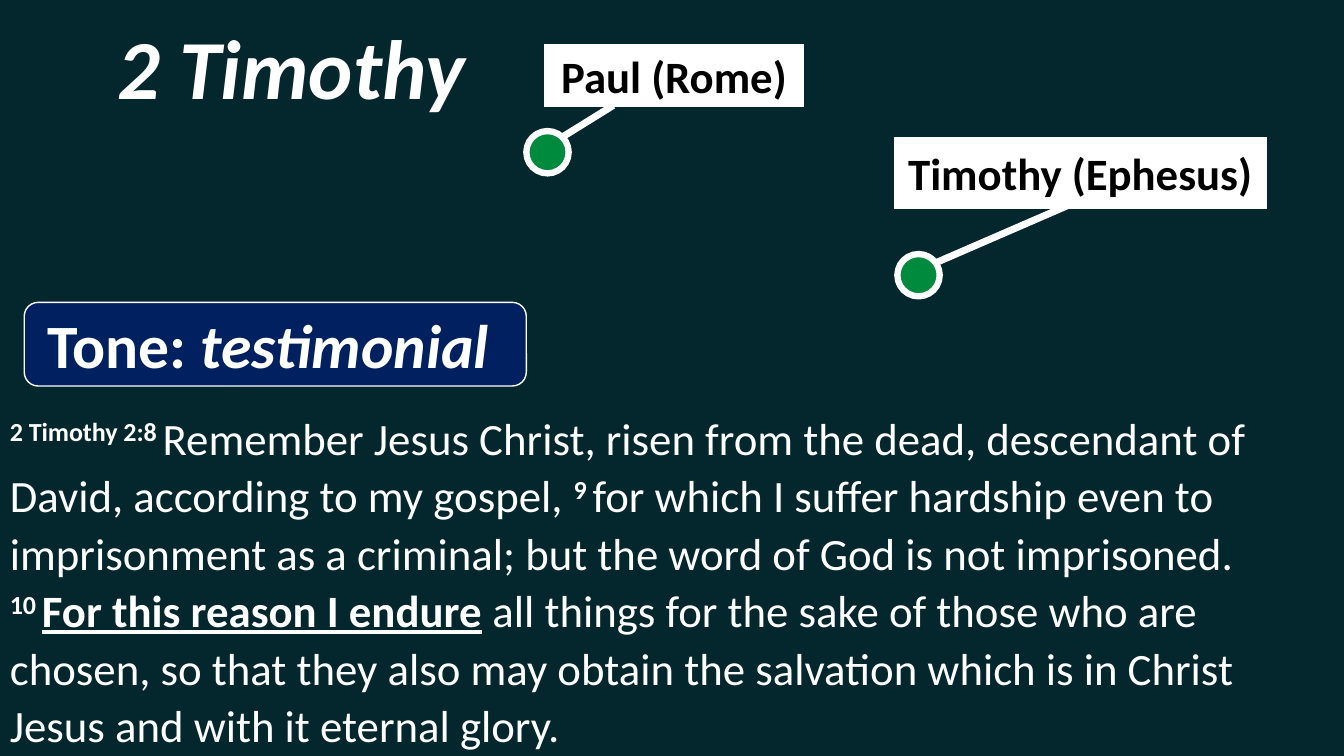
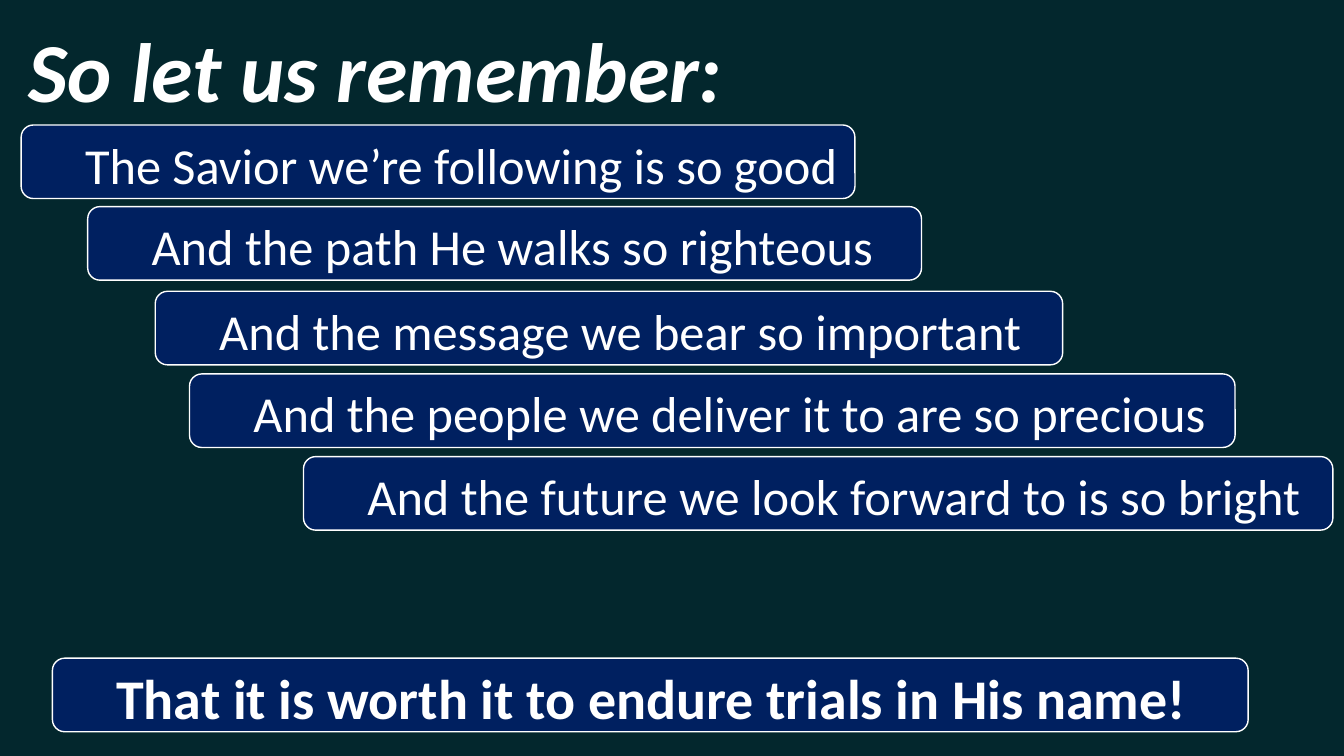
from dataclasses import dataclass

from lxml import etree
from pptx import Presentation
from pptx.dml.color import RGBColor
from pptx.enum.shapes import MSO_SHAPE
from pptx.enum.text import MSO_ANCHOR, MSO_AUTO_SIZE, PP_ALIGN
from pptx.oxml.ns import qn
from pptx.shapes.autoshape import Shape
from pptx.slide import Slide
from pptx.text.text import TextFrame
from pptx.util import Emu, Pt

EMU_PER_PX = 9144
CENTER, LEFT = PP_ALIGN.CENTER, PP_ALIGN.LEFT
MIDDLE = MSO_ANCHOR.MIDDLE
GROW = MSO_AUTO_SIZE.SHAPE_TO_FIT_TEXT
CALLOUT = MSO_SHAPE.LINE_CALLOUT_1
OVAL = MSO_SHAPE.OVAL
RECTANGLE = MSO_SHAPE.RECTANGLE
ROUNDED = MSO_SHAPE.ROUNDED_RECTANGLE


@dataclass(frozen=True)
class Theme:
    font: str = "Calibri"
    background: str = "03272D"
    banner: str = "002060"
    city: str = "008A3E"
    light: str = "FFFFFF"
    dark: str = "000000"
    title_size: int = 60
    tone_size: int = 44
    conclusion_size: int = 40
    reminder_size: int = 36
    body_size: int = 32
    line_spacing: float = 1.07
    superscript: int = 30000
    banner_line: float = 1
    callout_line: float = 5
    city_line: float = 4.5


THEME = Theme()


@dataclass(frozen=True)
class Box:
    left: int
    top: int
    width: int
    height: int


@dataclass(frozen=True)
class Words:
    text: str
    bold: bool = False
    italic: bool = False
    underline: bool = False
    raised: bool = False


@dataclass(frozen=True)
class Place:
    label: Words
    box: Box
    leader: tuple[float, float, float, float]
    city_left: int
    city_top: int


@dataclass(frozen=True)
class Reminder:
    words: Words
    box: Box
    size: int = THEME.reminder_size


CITY_SIZE = 42
REMINDER_HEIGHT = 73
REMINDER_INDENT = 50
VERSE_RIGHT_MARGIN = 80

PLACES = (
    Place(Words("Paul (Rome) ", bold=True), Box(543, 47, 251, 56),
          (1.67, 0.03, 1.03, 0.26), 522, 130),
    Place(Words("Timothy (Ephesus)", bold=True), Box(890, 139, 363, 65),
          (2.03, 0.04, 0.94, 0.49), 890, 252),
)

VERSE = (
    Words("2 Timothy 2:8 ", bold=True, raised=True),
    Words("Remember Jesus Christ, risen from the dead, descendant of David, "
          "according to my gospel, "),
    Words("9 ", bold=True, raised=True),
    Words("for which I suffer hardship even to imprisonment as a criminal; "
          "but the word of God is not imprisoned. "),
    Words("10 ", bold=True, raised=True),
    Words("For this reason I endure", bold=True, underline=True),
    Words(" all things for the sake of those who are chosen, so that they also "
          "may obtain the salvation which is in Christ Jesus and with it "
          "eternal glory."),
)

REMINDERS = (
    Reminder(Words("The Savior we’re following is so good"),
             Box(21, 124, 827, REMINDER_HEIGHT)),
    Reminder(Words("And the path He walks so righteous"),
             Box(87, 205, 827, REMINDER_HEIGHT)),
    Reminder(Words("And the message we bear so important"),
             Box(154, 289, 900, REMINDER_HEIGHT)),
    Reminder(Words("And the people we deliver it to are so precious"),
             Box(188, 371, 1037, REMINDER_HEIGHT)),
    Reminder(Words("And the future we look forward to is so bright"),
             Box(301, 453, 1021, REMINDER_HEIGHT)),
    Reminder(Words("That it is worth it to endure trials in His name!", bold=True),
             Box(52, 653, 1186, REMINDER_HEIGHT), THEME.conclusion_size),
)


def px(length: int) -> Emu:
    return Emu(length * EMU_PER_PX)


def frame(box: Box) -> tuple[Emu, Emu, Emu, Emu]:
    return px(box.left), px(box.top), px(box.width), px(box.height)


def rgb(color: str) -> RGBColor:
    return RGBColor.from_string(color)


def write(text_frame: TextFrame, passage: tuple[Words, ...], size: int,
          color: str = THEME.light, align: PP_ALIGN = CENTER,
          spacing: float = 1.0, indent: int = 0) -> None:
    text_frame.word_wrap = True
    paragraph = text_frame.paragraphs[0]
    paragraph.alignment = align
    paragraph.line_spacing = spacing
    if indent:
        properties = paragraph._p.get_or_add_pPr()
        properties.set("marL", "0")
        properties.set("indent", str(px(indent)))
    for words in passage:
        run = paragraph.add_run()
        run.text = words.text
        font = run.font
        font.name = THEME.font
        font.size = Pt(size)
        font.bold = words.bold
        font.italic = words.italic
        font.underline = words.underline
        font.color.rgb = rgb(color)
        if words.raised:
            run._r.get_or_add_rPr().set("baseline", str(THEME.superscript))


def add_panel(slide: Slide, kind: MSO_SHAPE, box: Box, fill: str,
              line_width: float = 0) -> Shape:
    panel = slide.shapes.add_shape(kind, *frame(box))
    panel.shadow.inherit = False
    panel.fill.solid()
    panel.fill.fore_color.rgb = rgb(fill)
    if line_width:
        panel.line.color.rgb = rgb(THEME.light)
        panel.line.width = Pt(line_width)
    else:
        panel.line.fill.background()
    panel.text_frame.vertical_anchor = MIDDLE
    return panel


def add_banner(slide: Slide, box: Box) -> TextFrame:
    return add_panel(slide, ROUNDED, box, THEME.banner, THEME.banner_line).text_frame


def add_title(slide: Slide, title: str, box: Box) -> None:
    heading = slide.shapes.add_textbox(*frame(box)).text_frame
    write(heading, (Words(title, bold=True, italic=True),), THEME.title_size)
    heading.auto_size = GROW


def add_place(slide: Slide, place: Place) -> None:
    callout = add_panel(slide, CALLOUT, place.box, THEME.light, THEME.callout_line)
    outline = callout.line._get_or_add_ln()
    etree.SubElement(outline, qn("a:miter")).set("lim", "800000")
    for index, value in enumerate(place.leader):
        callout.adjustments[index] = value
    write(callout.text_frame, (place.label,), THEME.body_size, THEME.dark)
    city = Box(place.city_left, place.city_top, CITY_SIZE, CITY_SIZE)
    add_panel(slide, OVAL, city, THEME.city, THEME.city_line)


def add_slide(deck: Presentation) -> Slide:
    slide = deck.slides.add_slide(deck.slide_layouts[6])
    slide.background.fill.solid()
    slide.background.fill.fore_color.rgb = rgb(THEME.background)
    return slide


def build_letter(deck: Presentation) -> None:
    slide = add_slide(deck)
    add_title(slide, "2 Timothy ", Box(0, 10, 597, 111))
    for place in PLACES:
        add_place(slide, place)
    verse = add_panel(slide, RECTANGLE, Box(0, 399, 1333, 351),
                      THEME.background).text_frame
    verse.margin_right = px(VERSE_RIGHT_MARGIN)
    write(verse, VERSE, THEME.body_size, align=LEFT, spacing=THEME.line_spacing)
    tone = add_banner(slide, Box(24, 300, 498, 83))
    write(tone, (Words("Tone: ", bold=True),
                 Words("testimonial ", bold=True, italic=True)), THEME.tone_size)


def build_reminders(deck: Presentation) -> None:
    slide = add_slide(deck)
    add_title(slide, "So let us remember:", Box(0, 13, 745, 111))
    for reminder in REMINDERS:
        write(add_banner(slide, reminder.box), (reminder.words,), reminder.size,
              align=LEFT, spacing=THEME.line_spacing, indent=REMINDER_INDENT)


def main() -> None:
    deck = Presentation()
    deck.slide_width = px(1333)
    deck.slide_height = px(750)
    build_letter(deck)
    build_reminders(deck)
    deck.save("out.pptx")


if __name__ == "__main__":
    main()
